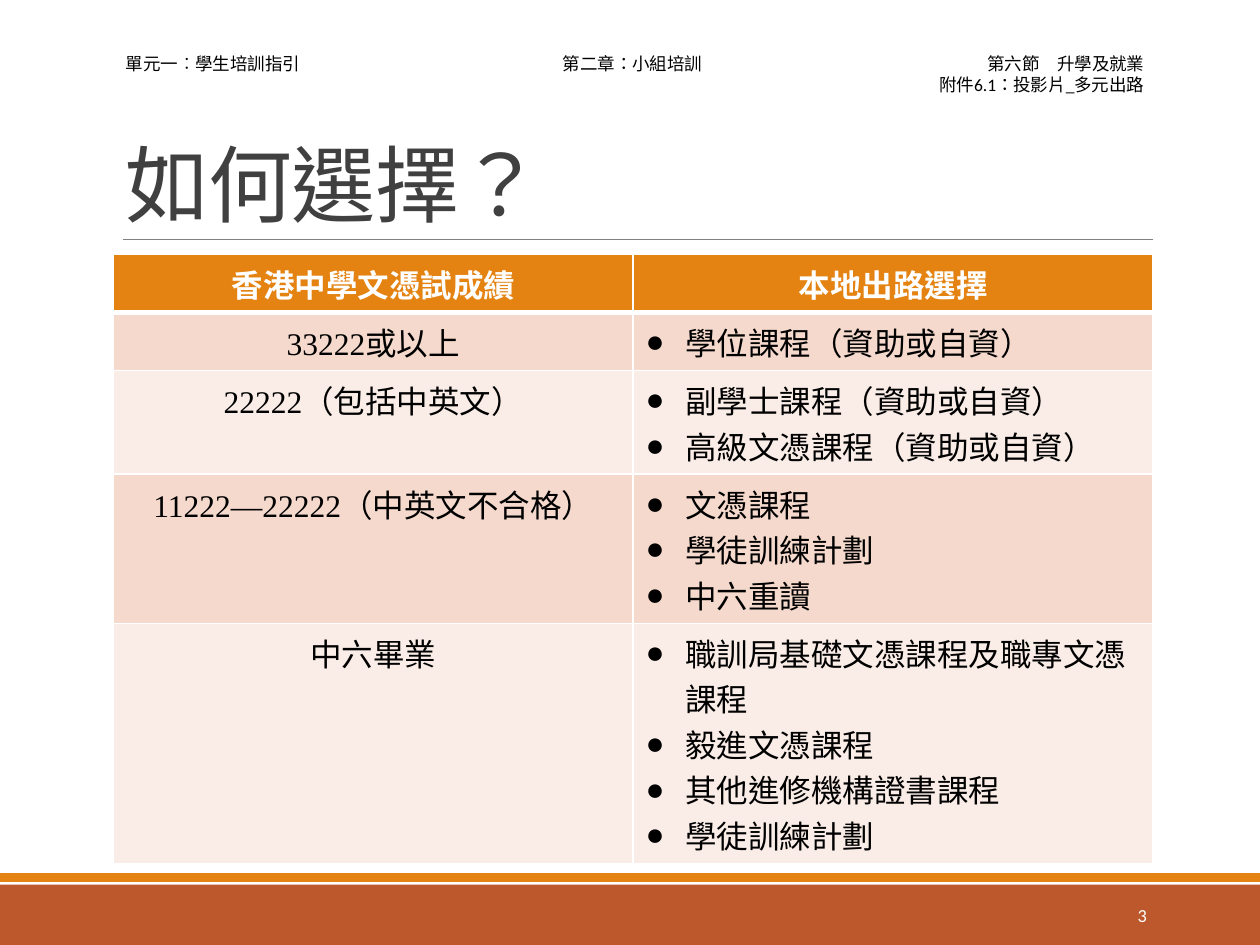
from lxml.etree import SubElement
from pptx import Presentation
from pptx.dml.color import RGBColor
from pptx.enum.lang import MSO_LANGUAGE_ID as Language
from pptx.enum.shapes import MSO_CONNECTOR as Connector, MSO_SHAPE as Shape
from pptx.enum.text import MSO_ANCHOR as Anchor, PP_ALIGN as Align
from pptx.oxml.ns import qn
from pptx.util import Pt

# Content
HEADERS = [  # left, height, alignment, lines
    (64.8, 19.4, Align.LEFT, ["單元一︰學生培訓指引"]),
    (285.1, 19.4, Align.CENTER, ["第二章：小組培訓"]),
    (508.3, 53.3, Align.RIGHT, ["第六節　升學及就業", "附件6.1：投影片_多元出路"]),
]
TITLE = "如何選擇？"
COLUMNS = ["香港中學文憑試成績", "本地出路選擇"]
ROUTES = [  # result, its font, choices, lines the choices take
    ("33222或以上", "Times New Roman", ["學位課程（資助或自資）"], 1),
    ("22222（包括中英文）", "Times New Roman",
     ["副學士課程（資助或自資）", "高級文憑課程（資助或自資）"], 2),
    ("11222—22222（中英文不合格）", "Times New Roman",
     ["文憑課程", "學徒訓練計劃", "中六重讀"], 3),
    ("中六畢業", "Times New Roman",
     ["職訓局基礎文憑課程及職專文憑課程", "毅進文憑課程", "其他進修機構證書課程", "學徒訓練計劃"], 5),
]
PAGE_NUMBER = "3"
COLORS = {"rust": "BD582C", "orange": "E48312", "rule": "808080", "title": "404040",
          "black": "000000", "white": "FFFFFF", "dark band": "F5D9CC", "light band": "FAEDE7"}
LINE_HEIGHT, CELL_MARGINS, INDENT = 26, 7.2, 22.5


def color(name):
    return RGBColor.from_string(COLORS[name])


def write(frame, lines, size, ink, font="Calibri", align=Align.LEFT, bold=False):
    frame.text = "\n".join(lines)
    for para in frame.paragraphs:
        para.alignment = align
        for span in para.runs:
            span.font.size, span.font.name, span.font.bold = Pt(size), font, bold
            span.font.color.rgb = color(ink)
            span.font.language_id = Language.TRADITIONAL_CHINESE


def add_text(page, place, lines, size, ink, anchor, **style):
    frame = page.shapes.add_textbox(*map(Pt, place)).text_frame
    frame.word_wrap, frame.vertical_anchor = True, anchor
    write(frame, lines, size, ink, **style)
    return frame


def add_bar(page, top, height, fill):
    bar = page.shapes.add_shape(Shape.RECTANGLE, 0, Pt(top), Pt(720), Pt(height))
    bar.shadow.inherit = False
    bar.fill.solid()
    bar.fill.fore_color.rgb = color(fill)
    bar.line.fill.background()


def add_bullets(frame):
    for para in frame.paragraphs:
        props = para._p.get_or_add_pPr()
        props.set("marL", str(Pt(INDENT)))
        props.set("indent", str(-Pt(INDENT)))
        SubElement(props, qn("a:buFont"), typeface="Arial")
        SubElement(props, qn("a:buChar"), char="●")


def style_cell(cell, fill, top, bottom):
    props = cell._tc.get_or_add_tcPr()
    for side, width in (("L", 1), ("R", 1), ("T", top), ("B", bottom)):
        edge = SubElement(props, qn(f"a:ln{side}"), w=str(Pt(width)))
        paint = SubElement(edge, qn("a:solidFill"))
        SubElement(paint, qn("a:srgbClr"), val=COLORS["white"])
    cell.fill.solid()
    cell.fill.fore_color.rgb = color(fill)


deck = Presentation()
deck.slide_width, deck.slide_height = Pt(720), Pt(540)
page = deck.slides.add_slide(deck.slide_layouts[6])

# Footer bars and title rule
add_bar(page, 505.6, 36, "rust")
add_bar(page, 499, 5, "orange")
rule = page.shapes.add_connector(Connector.STRAIGHT, Pt(70.4), Pt(136.8), Pt(658.8), Pt(136.8))
rule.line.color.rgb, rule.line.width = color("rule"), Pt(0.5)
SubElement(rule._element.spPr, qn("a:effectLst"))

# Running headers
for left, height, align, lines in HEADERS:
    add_text(page, (left, 26.6, 152.6, height), lines, 10, "black", Anchor.TOP, align=align)

# Title
title = add_text(page, (64.8, 22.3, 594, 114.5), [TITLE], 48, "title", Anchor.BOTTOM, font="Arial")
title.paragraphs[0].line_spacing = 0.85
title.paragraphs[0].runs[0].font._element.set("spc", "-50")

# Table of results and routes
heights = [CELL_MARGINS + LINE_HEIGHT * count for count in [1] + [route[3] for route in ROUTES]]
table = page.shapes.add_table(len(heights), 2, Pt(64.8), Pt(145.4), Pt(594), Pt(sum(heights))).table
for row, height in zip(table.rows, heights):
    row.height = Pt(height)
for cell, heading in zip(table.rows[0].cells, COLUMNS):
    write(cell.text_frame, [heading], 18, "white", align=Align.CENTER, bold=True)
    style_cell(cell, "orange", 1, 3)
for index, (result, font, choices, _) in enumerate(ROUTES, 1):
    left, right = table.rows[index].cells
    write(left.text_frame, [result], 18, "black", font=font, align=Align.CENTER)
    write(right.text_frame, choices, 18, "black")
    add_bullets(right.text_frame)
    for cell in (left, right):
        style_cell(cell, "dark band" if index % 2 else "light band", 3 if index == 1 else 1, 1)

# Page number
add_text(page, (584.6, 508.3, 77.8, 28.8), [PAGE_NUMBER], 10.5, "white", Anchor.MIDDLE,
         align=Align.RIGHT)

deck.save("out.pptx")
